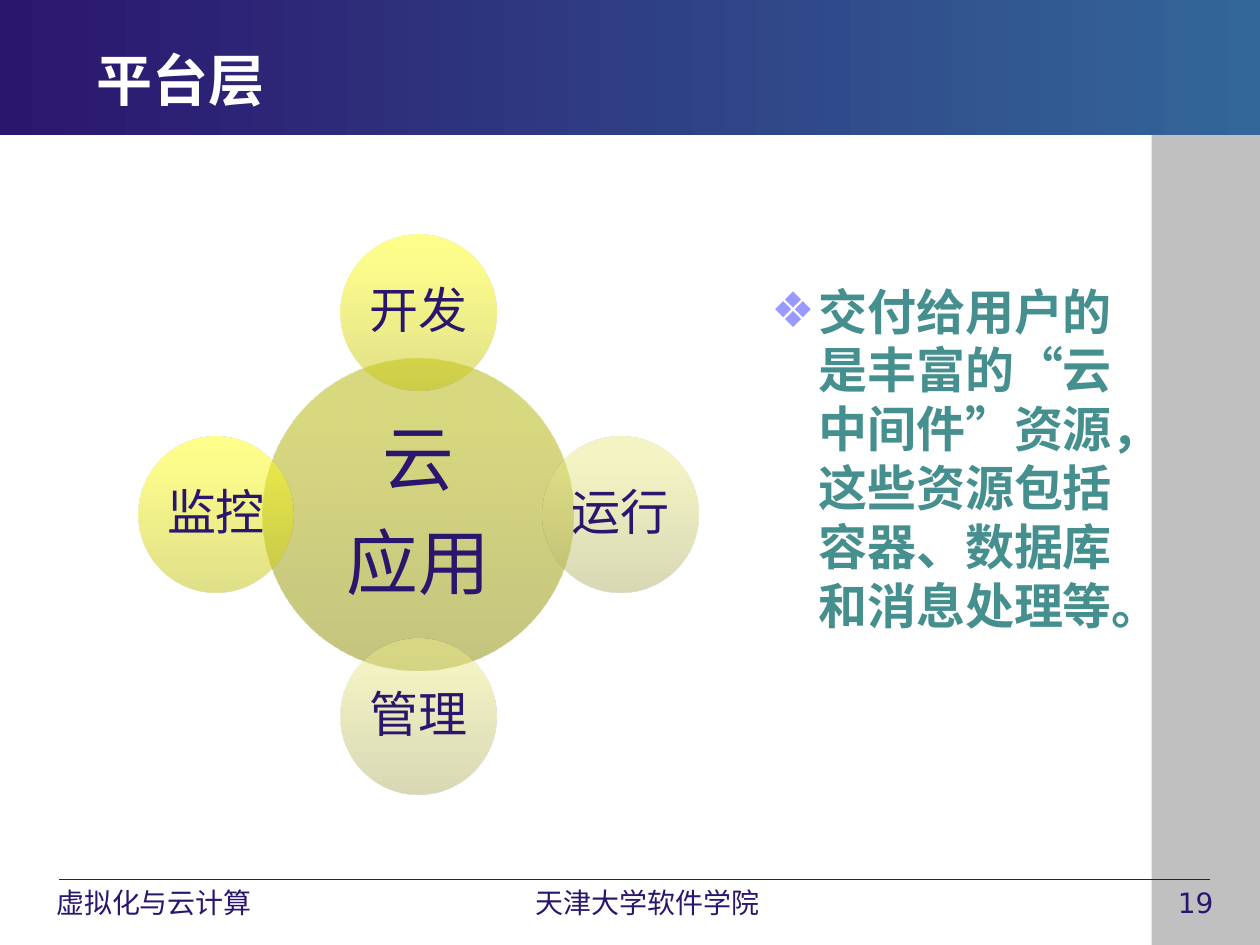
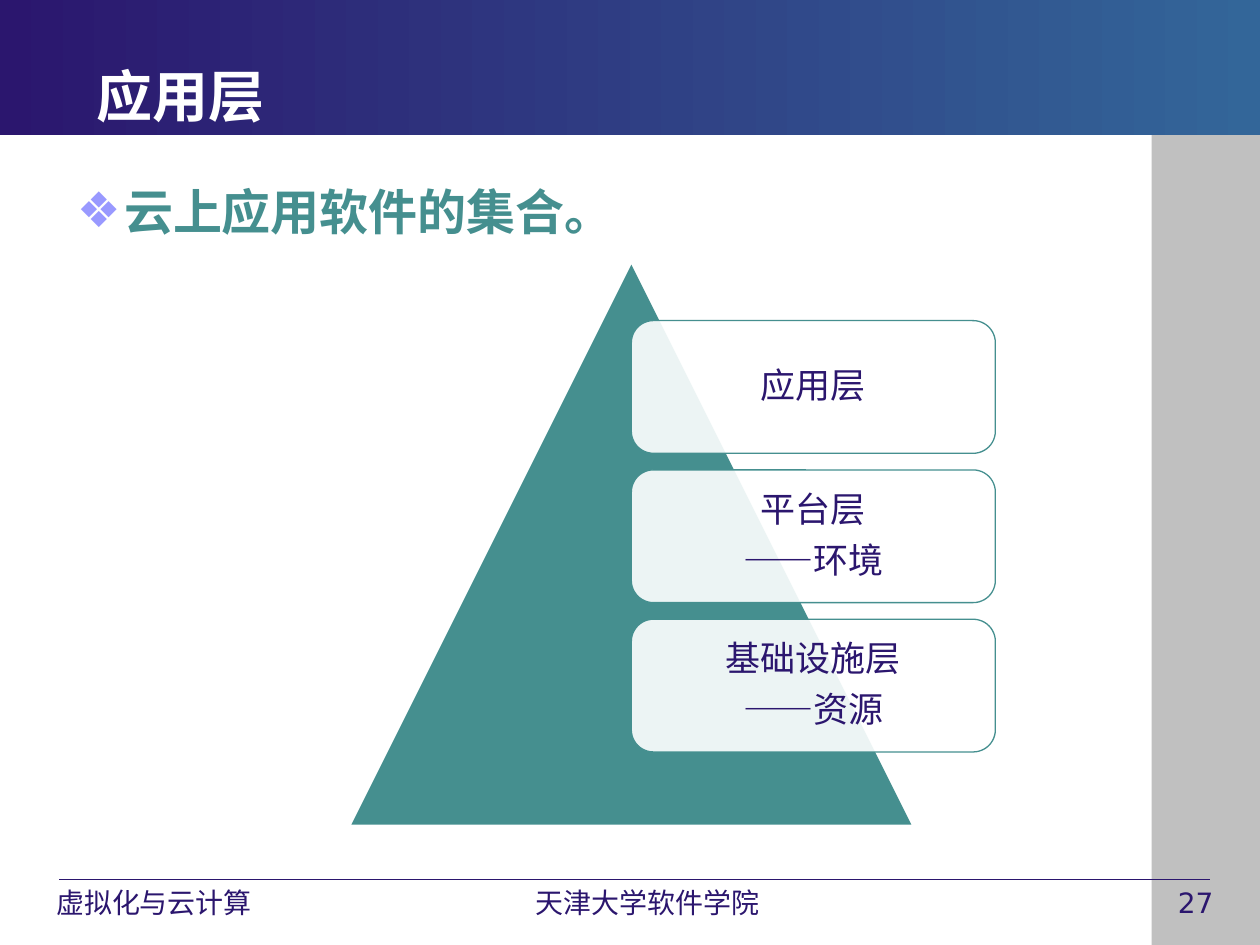
from math import cos, radians, sin

from lxml.etree import SubElement
from pptx import Presentation
from pptx.dml.color import RGBColor
from pptx.enum.shapes import MSO_CONNECTOR as Connector, MSO_SHAPE as Preset
from pptx.enum.text import MSO_ANCHOR as Anchor, MSO_AUTO_SIZE as AutoSize, PP_ALIGN as Align
from pptx.oxml.ns import qn
from pptx.util import Pt

# Shared look
FONT = "DejaVu Sans"
NAVY, BLUE, TEAL = "2B166E", "336699", "458F8F"
WHITE, GREY, LILAC = "FFFFFF", "C0C0C0", "9999FF"
PAGE_W, PAGE_H, BAND_H, SIDE_X, RULE_Y = 720, 540, 77, 658, 502.6
FOOTER_H = 25.2
TITLE_SIZE, BODY_SIZE, FOOTER_SIZE = 32, 28, 16

# Gradients as (position, colour), running from bottom to top
OLIVE = [(0, "8A8A00"), (80, "B3B300"), (100, "B4B400")]
YELLOW = [(0, "C1C113"), (80, "FAFA18"), (100, "FFFF15")]
PALE = [(0, "B2B26A"), (80, "E8E88A"), (100, "EBEB88")]


def colour(value):
    return RGBColor.from_string(value)


def apply(target, values):
    for name, value in values.items():
        setattr(target, name, value)


def place(shape, box):
    apply(shape, dict(zip(("left", "top", "width", "height"), map(Pt, box))))


def set_alpha(colour_node, percent):
    if percent < 100:
        SubElement(colour_node, qn("a:alpha"), val=str(percent * 1000))


def paint_gradient(shape, stops, angle, alpha=100):
    shape.fill.gradient()
    shape.fill.gradient_angle = angle
    stop_list = shape._element.spPr.find(".//" + qn("a:gsLst"))
    for stop in list(stop_list):
        stop_list.remove(stop)
    for position, value in stops:
        stop = SubElement(stop_list, qn("a:gs"), pos=str(position * 1000))
        set_alpha(SubElement(stop, qn("a:srgbClr"), val=value), alpha)


def paint_solid(shape, value, alpha=100):
    shape.fill.solid()
    shape.fill.fore_color.rgb = colour(value)
    set_alpha(shape._element.spPr.find(qn("a:solidFill"))[0], alpha)


def add_preset(page, preset, box, line=None):
    shape = page.shapes.add_shape(preset, *map(Pt, box))
    shape.shadow.inherit = False
    if line:
        shape.line.color.rgb = colour(line)
        shape.line.width = Pt(0.75)
    else:
        shape.line.fill.background()
    return shape


def write(shape, lines, size, ink=NAVY, bold=False, frame=None, para_format=None):
    text_frame = shape.text_frame
    apply(text_frame, {"word_wrap": True, "auto_size": AutoSize.NONE, **(frame or {})})
    text_frame.text = "\n".join(lines)
    for para in text_frame.paragraphs:
        apply(para, para_format or {})
        for span in para.runs:
            apply(span.font, {"name": FONT, "size": Pt(size), "bold": bold})
            span.font.color.rgb = colour(ink)


def write_label(shape, lines, size, inset):
    """Centred text inside a diagram shape."""
    sides = ("margin_left", "margin_top", "margin_right", "margin_bottom")
    frame = {"vertical_anchor": Anchor.MIDDLE, **dict.fromkeys(sides, Pt(inset))}
    write(shape, lines, size, frame=frame, para_format={
        "alignment": Align.CENTER, "line_spacing": 0.9, "space_after": Pt(size * 0.37)})


def add_footer_text(page, left, width, text, align):
    box = page.shapes.add_textbox(*map(Pt, (left, RULE_Y, width, FOOTER_H)))
    write(box, [text], FOOTER_SIZE, para_format={"alignment": align})


def build_layout(deck):
    """Draw bands, rule and footers once, then move them into the layout."""
    layout = deck.slide_layouts[1]
    page = deck.slides.add_slide(layout)
    start = len(page.shapes)
    # Bands
    paint_solid(add_preset(page, Preset.RECTANGLE, (
        SIDE_X, BAND_H, PAGE_W - SIDE_X, PAGE_H - BAND_H)), GREY)
    band = add_preset(page, Preset.RECTANGLE, (0, 0, PAGE_W, BAND_H))
    paint_gradient(band, [(0, NAVY), (100, BLUE)], 0)
    # Footer rule
    rule = page.shapes.add_connector(
        Connector.STRAIGHT, *map(Pt, (33.8, RULE_Y, 691.2, RULE_Y)))
    rule.line.color.rgb = colour(NAVY)
    rule.line.width = Pt(0.75)
    SubElement(rule._element.spPr, qn("a:effectLst"))
    # Footer texts
    add_footer_text(page, 18, 140, "虚拟化与云计算", Align.CENTER)
    add_footer_text(page, 289, 162, "天津大学软件学院", Align.CENTER)
    for shape in list(page.shapes)[start:]:
        layout.shapes._spTree.append(shape._element)
    return page


def fill_page(page, number, title, title_top, body, body_box):
    """Title, bulleted body and page number."""
    heading, content = page.shapes.title, page.placeholders[1]
    place(heading, (48.2, title_top, 648, 90))
    write(heading, [title], TITLE_SIZE, WHITE, True,
          {"vertical_anchor": Anchor.MIDDLE}, {"alignment": Align.LEFT})
    place(content, body_box)
    write(content, [body], BODY_SIZE, TEAL, True, {"vertical_anchor": Anchor.TOP},
          {"space_before": Pt(BODY_SIZE * 0.2), "line_spacing": 1.0})
    # Bullet
    props = content.text_frame.paragraphs[0]._p.get_or_add_pPr()
    apply_indent = {"marL": str(Pt(27)), "indent": str(-Pt(27))}
    for name, value in apply_indent.items():
        props.set(name, value)
    SubElement(SubElement(props, qn("a:buClr")), qn("a:srgbClr"), val=LILAC)
    SubElement(props, qn("a:buChar"), char="❖")
    add_footer_text(page, 666, 51, number, Align.LEFT)


def draw_orbit(page, left, top, size, hub_lines, satellites):
    """A hub circle with satellites spaced evenly clockwise from the top."""
    hub, moon = size * 0.556, size * 0.278
    radius = (size - moon) / 2
    centre_x, centre_y = left + size / 2, top + size / 2

    def add_circle(x, y, diameter, stops, lines, text_size, inset):
        box = (x - diameter / 2, y - diameter / 2, diameter, diameter)
        circle = add_preset(page, Preset.OVAL, box)
        paint_gradient(circle, stops, 90, 50)
        write_label(circle, lines, text_size, inset)

    add_circle(centre_x, centre_y, hub, OLIVE, hub_lines, 41, 4)
    for index, (text, stops) in enumerate(satellites):
        angle = radians(360 / len(satellites) * index)
        add_circle(centre_x + radius * sin(angle), centre_y - radius * cos(angle),
                   moon, stops, [text], 28, 2.5)


def draw_pyramid(page, left, top, size, layers):
    """A triangle with a column of cards starting at its axis."""
    paint_solid(add_preset(page, Preset.ISOSCELES_TRIANGLE, (left, top, size, size)), TEAL)
    card_h = size * 0.237
    pitch = card_h * 9 / 8
    for index, lines in enumerate(layers):
        card = add_preset(page, Preset.ROUNDED_RECTANGLE, (
            left + size / 2, top + size * 0.1 + index * pitch, size * 0.65, card_h), TEAL)
        paint_solid(card, WHITE, 90)
        write_label(card, lines, 20, 6)


def main():
    deck = Presentation()
    deck.slide_width, deck.slide_height = Pt(PAGE_W), Pt(PAGE_H)

    # Platform layer
    page = build_layout(deck)
    fill_page(page, "19", "平台层", 0,
              "交付给用户的是丰富的“云中间件”资源，这些资源包括容器、数据库和消息处理等。",
              (433.4, 157, 217.4, 230.4))
    draw_orbit(page, 79, 134, 320, ["云", "应用"],
               [("开发", YELLOW), ("运行", PALE), ("管理", PALE), ("监控", YELLOW)])

    # Application layer
    page = deck.slides.add_slide(deck.slide_layouts[1])
    fill_page(page, "27", "应用层", 9.4, "云上应用软件的集合。", (36.7, 100, 648, 345.6))
    draw_pyramid(page, 200.8, 151.2, 320,
                 [["应用层"], ["平台层", "——环境"], ["基础设施层", "——资源"]])

    deck.save("out.pptx")


if __name__ == "__main__":
    main()
